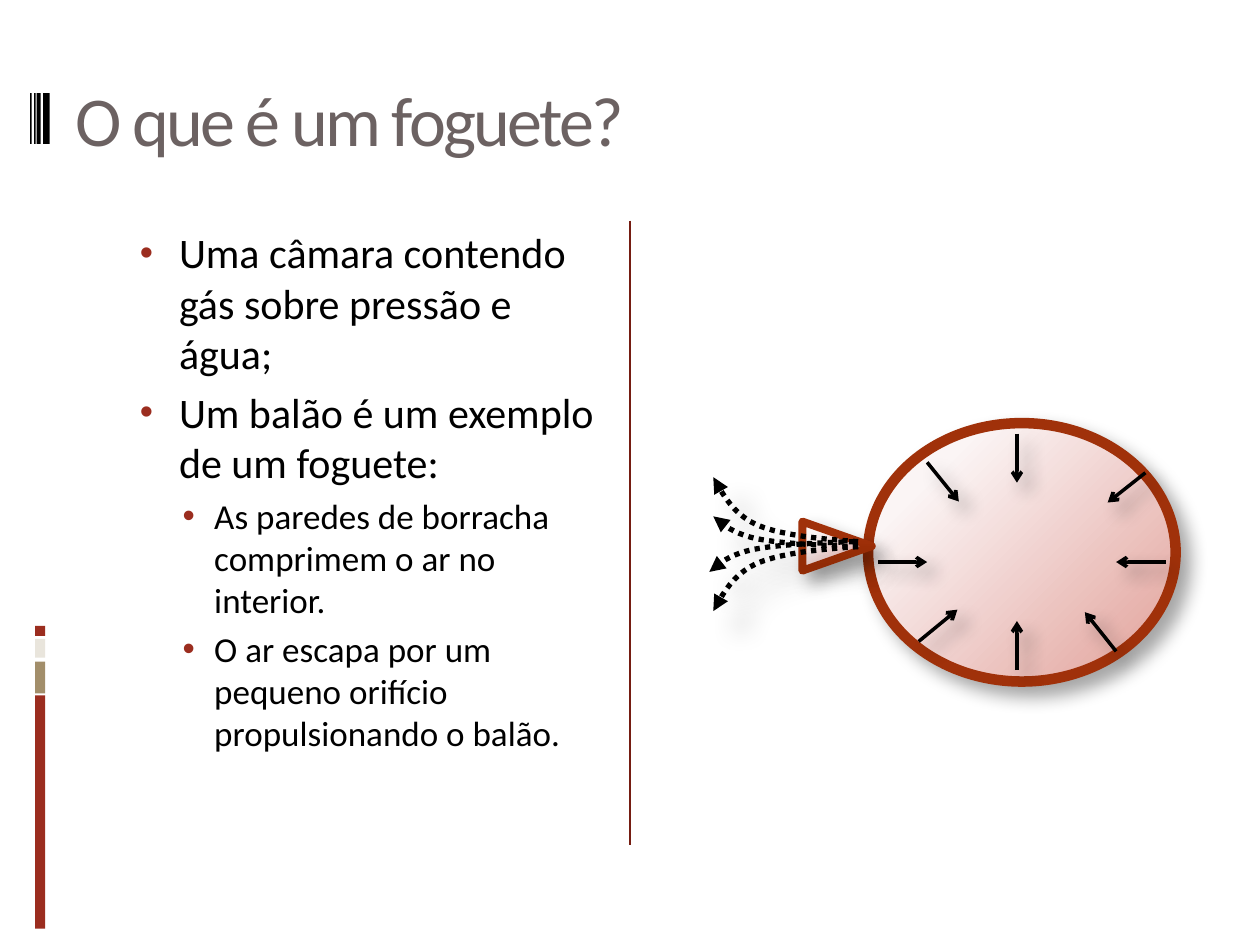
"""Builds the slide that explains a rocket with a balloon and its forces."""
from lxml.etree import SubElement
from pptx import Presentation
from pptx.dml.color import RGBColor
from pptx.enum.dml import MSO_LINE
from pptx.enum.shapes import MSO_CONNECTOR, MSO_SHAPE
from pptx.enum.text import MSO_ANCHOR
from pptx.oxml import parse_xml
from pptx.oxml.ns import nsdecls, qn
from pptx.util import Cm, Pt

FONT = "Calibri"
BLACK = RGBColor(0x00, 0x00, 0x00)
GRAY = RGBColor(0x6C, 0x62, 0x62)
RED = RGBColor(0x9B, 0x2D, 0x1F)
TAN = RGBColor(0xA2, 0x8E, 0x6A)
CREAM = RGBColor(0xE9, 0xE5, 0xDC)
WINE = RGBColor(0x75, 0x1D, 0x12)
RUBBER = RGBColor(0xA0, 0x31, 0x0A)
GLOW = RGBColor(0xFB, 0xF5, 0xF5)
BLUSH = RGBColor(0xE1, 0x9F, 0x98)

TITLE = "O que é um foguete?"
BULLETS = [
    (1, "Uma câmara contendo gás sobre pressão e água;"),
    (1, "Um balão é um exemplo de um foguete:"),
    (2, "As paredes de borracha comprimem o ar no interior."),
    (2, "O ar escapa por um pequeno orifício propulsionando o balão."),
]
LEVELS = {1: (24, 2.06, -0.79, 90), 2: (20, 2.77, -0.64, 100)}

SIDE_BARS = [(14.02, 4.7, RED), (13.34, 0.64, TAN), (12.88, 0.38, CREAM), (12.62, 0.2, RED)]
TITLE_BARS = [(0.87, 0.13), (0.74, 0.08), (0.69, 0.03), (0.61, 0.03)]
BALLOON_PARTS = [
    (MSO_SHAPE.OVAL, (17.5, 8.53, 6.2, 5.21), 0, 6),
    (MSO_SHAPE.ISOSCELES_TRIANGLE, (16.38, 10.31, 0.99, 1.4), 90, 4.5),
]
FORCES = [
    (20.5, 13.51, 20.5, 12.52),
    (17.7, 11.33, 18.69, 11.33),
    (20.5, 8.74, 20.5, 9.73),
    (23.5, 11.33, 22.5, 11.33),
    (18.52, 12.93, 19.3, 12.29),
    (18.69, 9.32, 19.33, 10.11),
    (23.09, 9.53, 22.33, 10.13),
    (22.5, 13.13, 21.87, 12.34),
]
JETS = [(17.3, 10.92, -1.3), (17.3, 11.02, 1.3), (17.3, 11.02, -0.61), (17.22, 10.92, 0.61)]
JET_LENGTH = 2.92
JET_CURVES = [
    [(0, 0), (0.26, 0.04), (0.53, 0.1), (0.7, 0.26)],
    [(0.7, 0.26), (0.86, 0.43), (0.93, 0.71), (1, 1)],
]
STEPS = 10
FORCE_SHADOW = (35, 10.2, 8)
JET_SHADOW = (26, 15, 18)


def add_shadow(shape, alpha, blur, distance):
    shape._element.spPr.append(parse_xml(
        f'<a:effectLst {nsdecls("a")}><a:outerShdw blurRad="{Pt(blur)}" dist="{Pt(distance)}" '
        f'dir="2700000" algn="tl" rotWithShape="0"><a:srgbClr val="{BLACK}">'
        f'<a:alpha val="{alpha * 1000}"/></a:srgbClr></a:outerShdw></a:effectLst>'))


def add_arrowhead(shape, kind):
    SubElement(shape.line._get_or_add_ln(), qn("a:tailEnd"), type=kind)


def set_line(shape, color, width):
    shape.line.color.rgb = color
    shape.line.width = Pt(width)


def add_bar(shapes, left, top, width, height, color):
    bar = shapes.add_shape(MSO_SHAPE.RECTANGLE, Cm(left), Cm(top), Cm(width), Cm(height))
    bar.shadow.inherit = False
    bar.fill.solid()
    bar.fill.fore_color.rgb = color
    bar.line.fill.background()


def add_line(shapes, ends, color, width):
    line = shapes.add_connector(MSO_CONNECTOR.STRAIGHT, *map(Cm, ends))
    set_line(line, color, width)
    return line


def add_text_box(shapes, place):
    box = shapes.add_textbox(*map(Cm, place))
    box.text_frame.word_wrap = True
    return box.text_frame


def style_span(para, size, color):
    span = para.runs[0]
    span.font.name = FONT
    span.font.size = Pt(size)
    span.font.color.rgb = color
    return span


def add_bullet(para, level, text):
    size, margin, indent, bullet_size = LEVELS[level]
    para.text = text
    style_span(para, size, BLACK)
    para.level = level - 1
    properties = para._p.get_or_add_pPr()
    properties.set("marL", str(Cm(margin)))
    properties.set("indent", str(Cm(indent)))
    before = SubElement(properties, qn("a:spcBef"))
    SubElement(before, qn("a:spcPct"), val="20000")
    color = SubElement(properties, qn("a:buClr"))
    SubElement(color, qn("a:srgbClr"), val=str(RED))
    SubElement(properties, qn("a:buSzPct"), val=str(bullet_size * 1000))
    SubElement(properties, qn("a:buFont"), typeface="Arial")
    SubElement(properties, qn("a:buChar"), char="•")


def add_balloon_part(shapes, kind, place, rotation, width):
    part = shapes.add_shape(kind, *map(Cm, place))
    part.rotation = rotation
    part._element.spPr.append(parse_xml(
        f'<a:gradFill {nsdecls("a")} rotWithShape="1"><a:gsLst>'
        f'<a:gs pos="20000"><a:srgbClr val="{GLOW}"/></a:gs>'
        f'<a:gs pos="100000"><a:srgbClr val="{BLUSH}"/></a:gs></a:gsLst>'
        '<a:path path="circle"><a:fillToRect l="-15000" t="-15000" r="115000" b="115000"/>'
        '</a:path></a:gradFill>'))
    set_line(part, RUBBER, width)
    SubElement(part.line._get_or_add_ln(), qn("a:round"))
    add_shadow(part, *FORCE_SHADOW)


def bezier(points, t):
    weights = ((1 - t) ** 3, 3 * t * (1 - t) ** 2, 3 * t ** 2 * (1 - t), t ** 3)
    return [sum(w * value for w, value in zip(weights, axis)) for axis in zip(*points)]


def add_jet(shapes, left, top, rise):
    places = [bezier(curve, step / STEPS) for curve in JET_CURVES for step in range(1, STEPS + 1)]
    builder = shapes.build_freeform(Cm(left), Cm(top))
    builder.add_line_segments(
        [(Cm(left - JET_LENGTH * x), Cm(top + rise * y)) for x, y in places], close=False)
    jet = builder.convert_to_shape()
    jet.fill.background()
    set_line(jet, BLACK, 3)
    jet.line.dash_style = MSO_LINE.ROUND_DOT
    add_arrowhead(jet, "triangle")
    add_shadow(jet, *JET_SHADOW)


def main():
    deck = Presentation()
    deck.slide_width, deck.slide_height = Cm(25.4), Cm(19.05)
    page = deck.slides.add_slide(deck.slide_layouts[6])
    shapes = page.shapes

    for top, height, color in SIDE_BARS:
        add_bar(shapes, 0.71, top, 0.2, height, color)
    for left, width in TITLE_BARS:
        add_bar(shapes, left, 1.88, width, 1.02, BLACK)
    divider = add_line(shapes, (12.7, 4.45, 12.7, 17.04), WINE, 0.75)
    SubElement(divider._element.spPr, qn("a:effectLst"))

    title = add_text_box(shapes, (1.27, 0.58, 22.86, 3.61))
    title.vertical_anchor = MSO_ANCHOR.MIDDLE
    title.text = TITLE
    span = style_span(title.paragraphs[0], 40, GRAY)
    span.font._element.set("spc", "-150")

    body = add_text_box(shapes, (1.3, 4.45, 11.23, 12.57))
    for number, (level, text) in enumerate(BULLETS):
        para = body.add_paragraph() if number else body.paragraphs[0]
        add_bullet(para, level, text)

    for part in BALLOON_PARTS:
        add_balloon_part(shapes, *part)
    forces = shapes.add_group_shape()
    for ends in FORCES:
        arrow = add_line(forces.shapes, ends, BLACK, 2)
        add_arrowhead(arrow, "arrow")
        add_shadow(arrow, *FORCE_SHADOW)
    jets = shapes.add_group_shape()
    for jet in JETS:
        add_jet(jets.shapes, *jet)
    deck.save("out.pptx")


if __name__ == "__main__":
    main()
